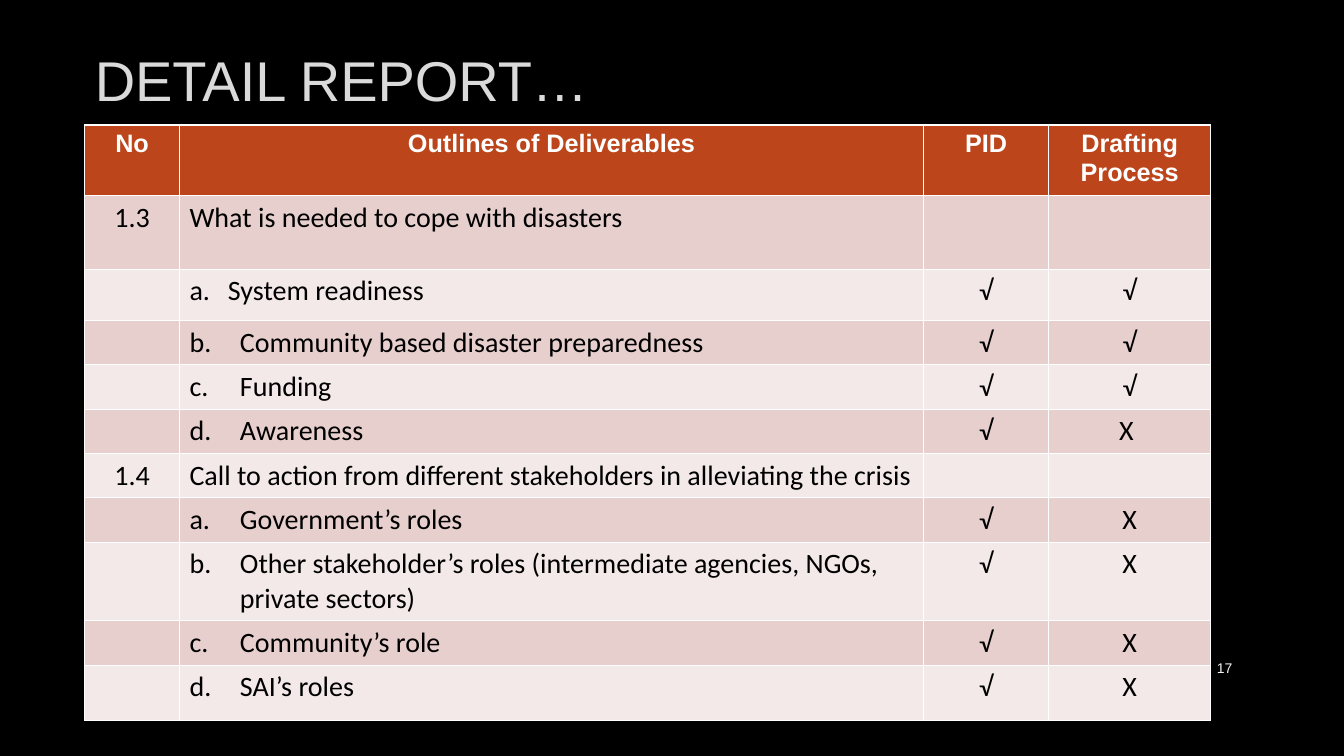
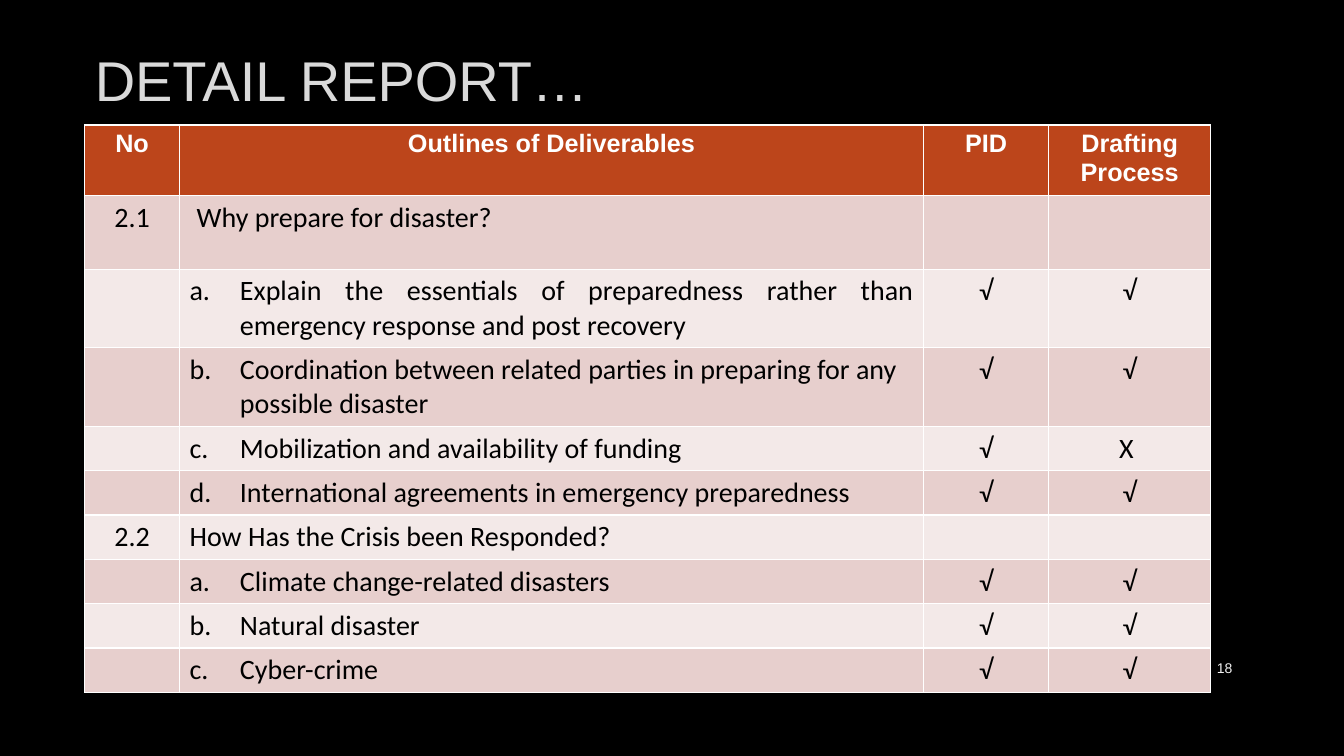
import pptx
import pptx.dml.color
import pptx.enum.text
import pptx.util
from lxml import etree
from pptx.oxml.ns import qn

Inches = pptx.util.Inches
Pt = pptx.util.Pt
ALIGN = pptx.enum.text.PP_ALIGN
MIDDLE = pptx.enum.text.MSO_ANCHOR.MIDDLE

BLACK, WHITE = "000000", "FFFFFF"
TITLE_GREY, NUMBER_GREY = "DADADA", "F2F2F2"
HEADER_FILL = "BC451B"
BAND_FILLS = ["E7CFCD", "F3E9E8"]

HEADINGS = ["No", "Outlines of Deliverables", "PID", "Drafting Process"]
COLUMN_WIDTHS = [0.94, 7.38, 1.24, 1.61]
HEADER, FIRST, SINGLE, DOUBLE = 0.67, 0.73, 0.44, 0.78  # row heights

# Page number, then rows of: section, outline, PID, drafting process, height.
# Rows without a section are lettered a., b., c. within the section above.
REPORTS = [
    (17, [
        ("1.3", "What is needed to cope with disasters", "", "", FIRST),
        ("", "System readiness", "√", "√", 0.51),
        ("", "Community based disaster preparedness", "√", "√", SINGLE),
        ("", "Funding", "√", "√", SINGLE),
        ("", "Awareness", "√", "X ", SINGLE),
        ("1.4", "Call to action from different stakeholders in alleviating the crisis",
         "", "", SINGLE),
        ("", "Government’s roles", "√", "X", SINGLE),
        ("", "Other stakeholder’s roles (intermediate agencies, NGOs, private sectors)",
         "√", "X", DOUBLE),
        ("", "Community’s role", "√", "X", SINGLE),
        ("", "SAI’s roles", "√", "X", 0.55),
    ]),
    (18, [
        ("2.1", "Why prepare for disaster?", "", "", FIRST),
        ("", "Explain the essentials of preparedness rather than emergency response "
         "and post recovery", "√", "√", DOUBLE),
        ("", "Coordination between related parties in preparing for any possible disaster",
         "√", "√", DOUBLE),
        ("", "Mobilization and availability of funding", "√", "X ", SINGLE),
        ("", "International agreements in emergency preparedness", "√", "√", SINGLE),
        ("2.2", "How Has the Crisis been Responded?", "", "", SINGLE),
        ("", "Climate change-related disasters", "√", "√", SINGLE),
        ("", "Natural disaster", "√", "√", SINGLE),
        ("", "Cyber-crime", "√", "√", SINGLE),
    ]),
]
SPECIAL_INDENTS = {"System readiness": 0.38, "Why prepare for disaster?": 0.07}
JUSTIFIED_START = "Explain"


def write(holder, text, font, size, color, align, bold=False):
    """Put one formatted paragraph in a shape or table cell and return it."""
    holder.text_frame.text = text
    holder.text_frame.word_wrap = True
    holder.text_frame.vertical_anchor = MIDDLE
    para = holder.text_frame.paragraphs[0]
    para.alignment = align
    para.font.name = font
    para.font.size = Pt(size)
    para.font.bold = bold
    para.font.color.rgb = pptx.dml.color.RGBColor.from_string(color)
    return para


def fill(area, color):
    area.fill.solid()
    area.fill.fore_color.rgb = pptx.dml.color.RGBColor.from_string(color)


deck = pptx.Presentation()
deck.slide_width = Inches(13.33)
deck.slide_height = Inches(7.5)
fill(deck.slide_master.background, BLACK)
title_only = deck.slide_layouts[5]

for page_number, rows in REPORTS:
    page = deck.slides.add_slide(title_only)

    title = page.shapes.title
    title.left, title.top = Inches(0.84), Inches(0.26)
    title.width, title.height = Inches(11.32), Inches(1.06)
    write(title, "DETAIL REPORT…", "Arial", 40, TITLE_GREY, ALIGN.LEFT)
    title.text_frame.auto_size = pptx.enum.text.MSO_AUTO_SIZE.NONE

    number_box = page.shapes.add_textbox(Inches(11.5), Inches(6.43), Inches(0.82), Inches(0.4))
    write(number_box, str(page_number), "Arial", 10, NUMBER_GREY, ALIGN.RIGHT)

    heights = [HEADER] + [row[-1] for row in rows]
    table = page.shapes.add_table(
        len(heights), len(HEADINGS), Inches(0.84), Inches(1.24),
        Inches(sum(COLUMN_WIDTHS)), Inches(sum(heights))).table
    for column, width in zip(table.columns, COLUMN_WIDTHS):
        column.width = Inches(width)
    for table_row, height in zip(table.rows, heights):
        table_row.height = Inches(height)

    for column, heading in enumerate(HEADINGS):
        cell = table.cell(0, column)
        fill(cell, HEADER_FILL)
        write(cell, heading, "Arial", 18, WHITE, ALIGN.CENTER, bold=True)

    letter = 0
    for index, (section, outline, pid, drafting, _) in enumerate(rows):
        letter = 0 if section else letter + 1
        for column, text in enumerate([section, outline, pid, drafting]):
            cell = table.cell(index + 1, column)
            fill(cell, BAND_FILLS[index % 2])
            align = ALIGN.CENTER
            if column == 1:
                align = ALIGN.JUSTIFY if text.startswith(JUSTIFIED_START) else ALIGN.LEFT
            para = write(cell, text, "Calibri", 20, BLACK, align)
            if column == 1:
                indent = Inches(SPECIAL_INDENTS.get(text, 0.5 if letter else 0))
                properties = para._p.get_or_add_pPr()
                properties.set("marL", str(indent))
                if letter:
                    properties.set("indent", str(-indent))
                    bullet = etree.Element(qn("a:buAutoNum"), type="alphaLcPeriod",
                                           startAt=str(letter))
                    properties.insert(0, bullet)

deck.save("out.pptx")
